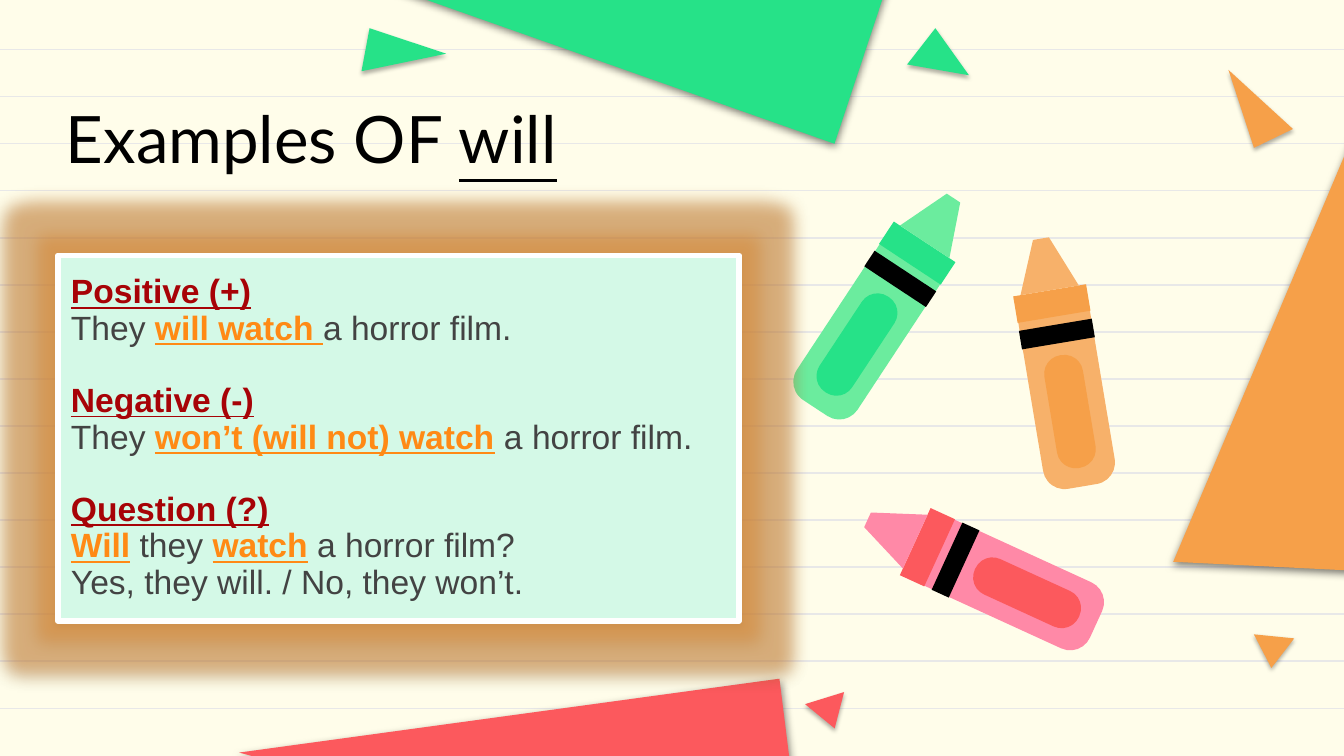
from math import cos, radians, sin

from lxml.etree import SubElement as Sub
from pptx import Presentation
from pptx.dml.color import RGBColor
from pptx.enum.shapes import MSO_CONNECTOR as Conn, MSO_SHAPE as Kind
from pptx.enum.text import MSO_ANCHOR as Anchor, MSO_AUTO_SIZE as Auto, PP_ALIGN as Align
from pptx.oxml.ns import qn
from pptx.util import Inches, Pt

CREAM = RGBColor(0xFF, 0xFD, 0xEA)
RULE = RGBColor(0xE8, 0xE8, 0xE8)
ORANGE = RGBColor(0xF6, 0xA0, 0x49)
PEACH = RGBColor(0xF7, 0xB1, 0x6A)
GREEN = RGBColor(0x26, 0xE2, 0x88)
LIME = RGBColor(0x6B, 0xEC, 0x9E)
RED = RGBColor(0xFC, 0x59, 0x5D)
PINK = RGBColor(0xFF, 0x89, 0xA7)
BLACK = RGBColor(0, 0, 0)
WHITE = RGBColor(0xFF, 0xFF, 0xFF)
MINT = RGBColor(0xD4, 0xF9, 0xE7)
GLOW = RGBColor(0xE0, 0x8E, 0x38)
MAROON = RGBColor(0xA7, 0x03, 0x07)
AMBER = RGBColor(0xFF, 0x8A, 0x15)
GREY = RGBColor(0x43, 0x43, 0x43)

WIDE = 10
HIGH = WIDE * 9 / 16
RULES, TOP, STEP = 15, 0.37, 0.35

TITLE = [("Examples OF ", False), ("will", True)]
HEAD, VERB, BODY = (MAROON, True), (AMBER, True), (GREY, False)
LINES = [
    [("Positive (+)", HEAD)],
    [("They ", BODY), ("will watch ", VERB), ("a horror film.", BODY)],
    [("Negative (-)", HEAD)],
    [("They ", BODY), ("won’t (will not) watch", VERB), (" a horror film.", BODY)],
    [("Question (?)", HEAD)],
    [("Will", VERB), (" ", BODY), ("they ", BODY), ("watch", VERB), (" a horror film?", BODY)],
    [("Yes, they will. / No, they won’t.", BODY)],
]

SHEETS = [
    (ORANGE, [(10.72, -0.54), (8.73, 4.18), (12.17, 4.35)]),
    (GREEN, [(6.74, -0.53), (6.21, 1.07), (2.41, -0.27)]),
    (RED, [(6.01, 6.73), (5.8, 5.05), (1.78, 5.6)]),
]
CHIPS = [
    (GREEN, [(6.96, 0.21), (6.75, 0.48), (7.21, 0.56)]),
    (ORANGE, [(9.63, 4.75), (9.33, 4.72), (9.46, 4.97)]),
    (RED, [(6.28, 5.15), (5.99, 5.24), (6.21, 5.42)]),
    (GREEN, [(3.32, 0.4), (2.75, 0.21), (2.69, 0.53)]),
    (ORANGE, [(9.14, 0.52), (9.33, 1.1), (9.62, 0.96)]),
]

CRAYONS = [
    (6.88, 1.8, 123.4, LIME, GREEN),
    (6.81, 4.03, 24.6, PINK, RED),
    (7.81, 2.16, 80.5, PEACH, ORANGE),
]
PARTS = [
    (Kind.ROUND_2_SAME_RECTANGLE, 0.15, 1.48, 0.54, "pale", (0, 0.3)),
    (Kind.RECTANGLE, 0, 0.2, 0.55, "deep", ()),
    (Kind.ROUNDED_RECTANGLE, 0.49, 1.34, 0.29, "deep", (0.48,)),
    (Kind.RECTANGLE, 0.26, 0.4, 0.55, "band", ()),
    (Kind.TRAPEZOID, -0.39, 0, 0.44, "pale", (0.41,)),
]


def paint(shape, color):
    shape.shadow.inherit = False
    shape.fill.solid()
    shape.fill.fore_color.rgb = color
    shape.line.fill.background()


def effect(shape, tag, color, alpha, **attrs):
    fx = shape.element.spPr.find(qn("a:effectLst"))
    node = Sub(fx, qn(tag), {k: str(v) for k, v in attrs.items()})
    tint = Sub(node, qn("a:srgbClr"), val=str(color))
    Sub(tint, qn("a:alpha"), val=str(alpha * 1000))


def shade(shape, alpha, blur, dist):
    effect(shape, "a:outerShdw", BLACK, alpha, blurRad=Pt(blur), dist=Pt(dist),
           dir=90 * 60000, algn="bl", rotWithShape=0)


def scrap(slide, color, dots, alpha, blur):
    first, *rest = [(Inches(x), Inches(y)) for x, y in dots]
    pen = slide.shapes.build_freeform(*first)
    pen.add_line_segments(rest, close=True)
    shape = pen.convert_to_shape()
    paint(shape, color)
    shade(shape, alpha, blur, 1.5)


def crayon(slide, x, y, turn, pale, deep):
    tones = {"pale": pale, "deep": deep, "band": BLACK}
    for kind, start, end, wide, tone, bends in PARTS:
        mid, long = (start + end) / 2, end - start
        left = x + mid * cos(radians(turn)) - wide / 2
        top = y + mid * sin(radians(turn)) - long / 2
        part = slide.shapes.add_shape(kind, *map(Inches, (left, top, wide, long)))
        for i, bend in enumerate(bends):
            part.adjustments[i] = bend
        part.rotation = turn - 90
        paint(part, tones[tone])


def rule(slide, y):
    line = slide.shapes.add_connector(Conn.STRAIGHT, 0, Inches(y), Inches(WIDE), Inches(y))
    line.line.color.rgb = RULE
    line.line.width = Pt(0.75)
    Sub(line.element.spPr, qn("a:effectLst"))


def frame(shape, anchor):
    text = shape.text_frame
    text.word_wrap = True
    text.auto_size = Auto.NONE
    text.vertical_anchor = anchor
    text.margin_left = text.margin_right = Inches(0.1)
    text.margin_top = text.margin_bottom = Inches(0.1)
    return text


def write(para, words, font, size, color, bold, under):
    run = para.add_run()
    run.text = words
    run.font.name, run.font.size = font, Pt(size)
    run.font.color.rgb = color
    run.font.bold, run.font.underline = bold, under


def panel(slide):
    box = slide.shapes.add_shape(Kind.RECTANGLE, *map(Inches, (0.43, 1.9, 5.07, 2.72)))
    paint(box, MINT)
    box.line.color.rgb = WHITE
    box.line.width = Pt(3)
    effect(box, "a:glow", GLOW, 50, rad=Inches(0.25))
    shade(box, 38, 3.1, 1.6)
    text = frame(box, Anchor.MIDDLE)
    for i, line in enumerate(LINES):
        para = text.add_paragraph() if i else text.paragraphs[0]
        para.alignment = Align.LEFT
        para.line_spacing = 0.9
        if i and line[0][1] == HEAD:
            para.space_before = Pt(19.4)
        for words, (color, bold) in line:
            write(para, words, "Arial", 18, color, bold, bold)
    return box


def main():
    """Build the lesson slide with examples of will."""
    deck = Presentation()
    deck.slide_width, deck.slide_height = Inches(WIDE), Inches(HIGH)
    slide = deck.slides.add_slide(deck.slide_layouts[5])
    slide.background.fill.solid()
    slide.background.fill.fore_color.rgb = CREAM
    for i in range(RULES):
        rule(slide, TOP + i * STEP)
    for color, dots in SHEETS:
        scrap(slide, color, dots, 50, 4.5)
    for spot in CRAYONS:
        crayon(slide, *spot)
    for color, dots in CHIPS:
        scrap(slide, color, dots, 31, 2.2)
    box = panel(slide)
    title = slide.shapes.title
    title.left, title.top, title.width, title.height = map(Inches, (0.39, 0.63, 4.71, 0.82))
    para = frame(title, Anchor.TOP).paragraphs[0]
    para.alignment = Align.LEFT
    for words, under in TITLE:
        write(para, words, "Lato", 35, BLACK, False, under)
    box.element.addnext(title.element)
    deck.save("out.pptx")


if __name__ == "__main__":
    main()
